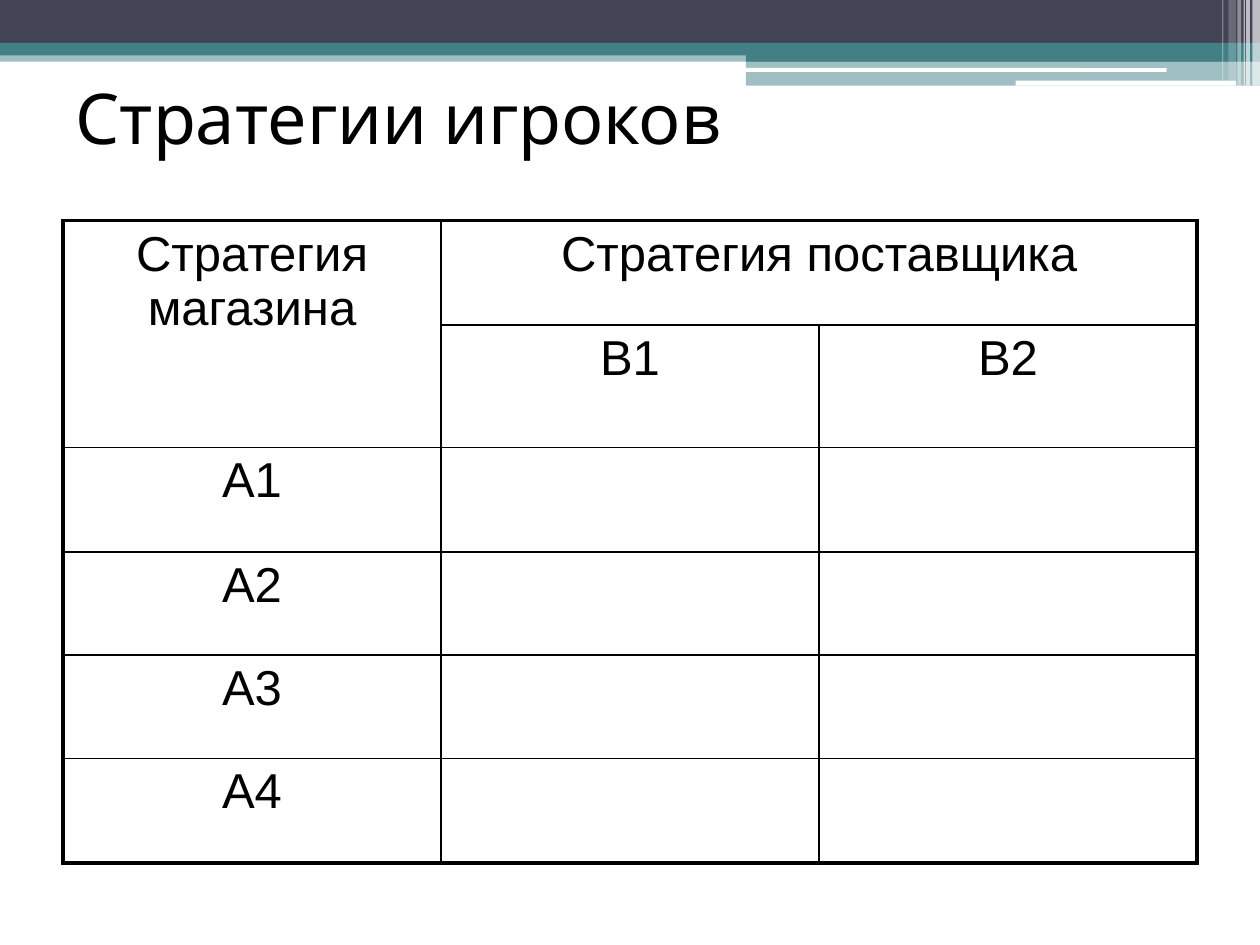
from pptx import Presentation
from pptx.dml.color import RGBColor
from pptx.enum.shapes import MSO_SHAPE as Shape
from pptx.enum.text import MSO_ANCHOR as Anchor, PP_ALIGN as Align
from pptx.oxml.ns import qn
from pptx.util import Inches, Pt
from lxml.etree import SubElement

SLATE, TEAL, WHITE, BLACK = "424456", "438086", "FFFFFF", "000000"
BANDS = [
    (0, 0.4, 10, 0.09, TEAL, 50),
    (0, 0, 10, 0.34, SLATE, 100),
    (0, 0.34, 10, 0.1, TEAL, 100),
    (5.92, 0.39, 4.08, 0.1, TEAL, 100),
    (5.92, 0.48, 4.08, 0.2, TEAL, 50),
]
GROOVES = [(5.91, 0.54, 3.35, 0.03, WHITE, 100), (8.06, 0.64, 1.75, 0.04, WHITE, 100)]
STRIPES = [
    (9.94, 0, 0.06, 0.68, WHITE, 65),
    (9.89, 0, 0.03, 0.68, WHITE, 65),
    (9.87, 0, 0.01, 0.68, WHITE, 60),
    (9.82, 0, 0.03, 0.68, WHITE, 40),
    (9.75, 0, 0.06, 0.64, WHITE, 20),
    (9.7, 0, 0.01, 0.64, WHITE, 30),
]
ROWS = [
    ("Стратегия магазина", "Стратегия поставщика", ""),
    ("", "В1", "В2"),
    ("А1", "", ""),
    ("А2", "", ""),
    ("А3", "", ""),
    ("А4", "", ""),
]
ROW_HEIGHTS = (0.83, 0.97, 0.83, 0.82, 0.82, 0.83)


def color(value):
    """Turn a hex string into a colour."""
    return RGBColor.from_string(value)


def style_text(para, font, size):
    """Format every run of a paragraph."""
    for span in para.runs:
        span.font.name = font
        span.font.size = Pt(size)
        span.font.color.rgb = color(BLACK)


def add_bar(page, kind, left, top, width, height, fill, opacity):
    """Add a plain filled bar with the given opacity in percent."""
    bar = page.shapes.add_shape(kind, Inches(left), Inches(top), Inches(width), Inches(height))
    bar.shadow.inherit = False
    bar.line.fill.background()
    bar.fill.solid()
    bar.fill.fore_color.rgb = color(fill)
    if opacity < 100:
        tint = bar._element.spPr.find(qn("a:solidFill"))[0]
        SubElement(tint, qn("a:alpha"), val=str(opacity * 1000))


def add_header(page):
    """Draw the layered bands across the top of the page."""
    for kind, bars in ((Shape.RECTANGLE, BANDS), (Shape.ROUNDED_RECTANGLE, GROOVES),
                       (Shape.RECTANGLE, STRIPES)):
        for bar in bars:
            add_bar(page, kind, *bar)


def add_title(page, text, left, top, width, height):
    """Place the title placeholder above the header bands."""
    title = page.shapes.title
    title.left, title.top = Inches(left), Inches(top)
    title.width, title.height = Inches(width), Inches(height)
    frame = title.text_frame
    frame.text = text
    frame.vertical_anchor = Anchor.MIDDLE
    frame.paragraphs[0].alignment = Align.LEFT
    style_text(frame.paragraphs[0], "Cabin", 40)
    page.shapes._spTree.append(title._element)


def set_borders(cell, **widths):
    """Give each side of a cell a black line of the given width in points."""
    properties = cell._tc.get_or_add_tcPr()
    for index, (side, width) in enumerate(widths.items()):
        line = properties.makeelement(qn(f"a:ln{side}"), {"w": str(Pt(width))})
        fill = SubElement(line, qn("a:solidFill"))
        SubElement(fill, qn("a:srgbClr"), val=BLACK)
        properties.insert(index, line)


def add_strategy_table(page, left, top, width, height):
    """Draw the strategy grid with a heavy outer frame."""
    row_count, column_count = len(ROWS), len(ROWS[0])
    table = page.shapes.add_table(row_count, column_count, Inches(left), Inches(top),
                                  Inches(width), Inches(height)).table
    table.first_row = table.horz_banding = False
    for column in table.columns:
        column.width = Inches(width / column_count)
    for row, row_height in zip(table.rows, ROW_HEIGHTS):
        row.height = Inches(row_height)
    table.cell(0, 0).merge(table.cell(1, 0))
    table.cell(0, 1).merge(table.cell(0, 2))
    for r, texts in enumerate(ROWS):
        for c, text in enumerate(texts):
            cell = table.cell(r, c)
            cell.fill.background()
            right = c + cell.span_width if cell.is_merge_origin else c + 1
            set_borders(cell,
                        L=2.25 if c == 0 else 1,
                        R=2.25 if right == column_count else 1,
                        T=2.25 if r == 0 else 1,
                        B=2.25 if r == row_count - 1 else 1)
            if text:
                para = cell.text_frame.paragraphs[0]
                para.text = text
                para.alignment = Align.CENTER
                style_text(para, "Arial", 28)


def main():
    """Build the deck and save it."""
    deck = Presentation()
    deck.slide_width, deck.slide_height = Inches(10), Inches(7.5)
    page = deck.slides.add_slide(deck.slide_layouts[5])
    add_header(page)
    add_title(page, "Стратегии игроков", 0.5, 0.3, 9, 1.25)
    add_strategy_table(page, 0.5, 1.75, 9, sum(ROW_HEIGHTS))
    deck.save("out.pptx")


if __name__ == "__main__":
    main()
